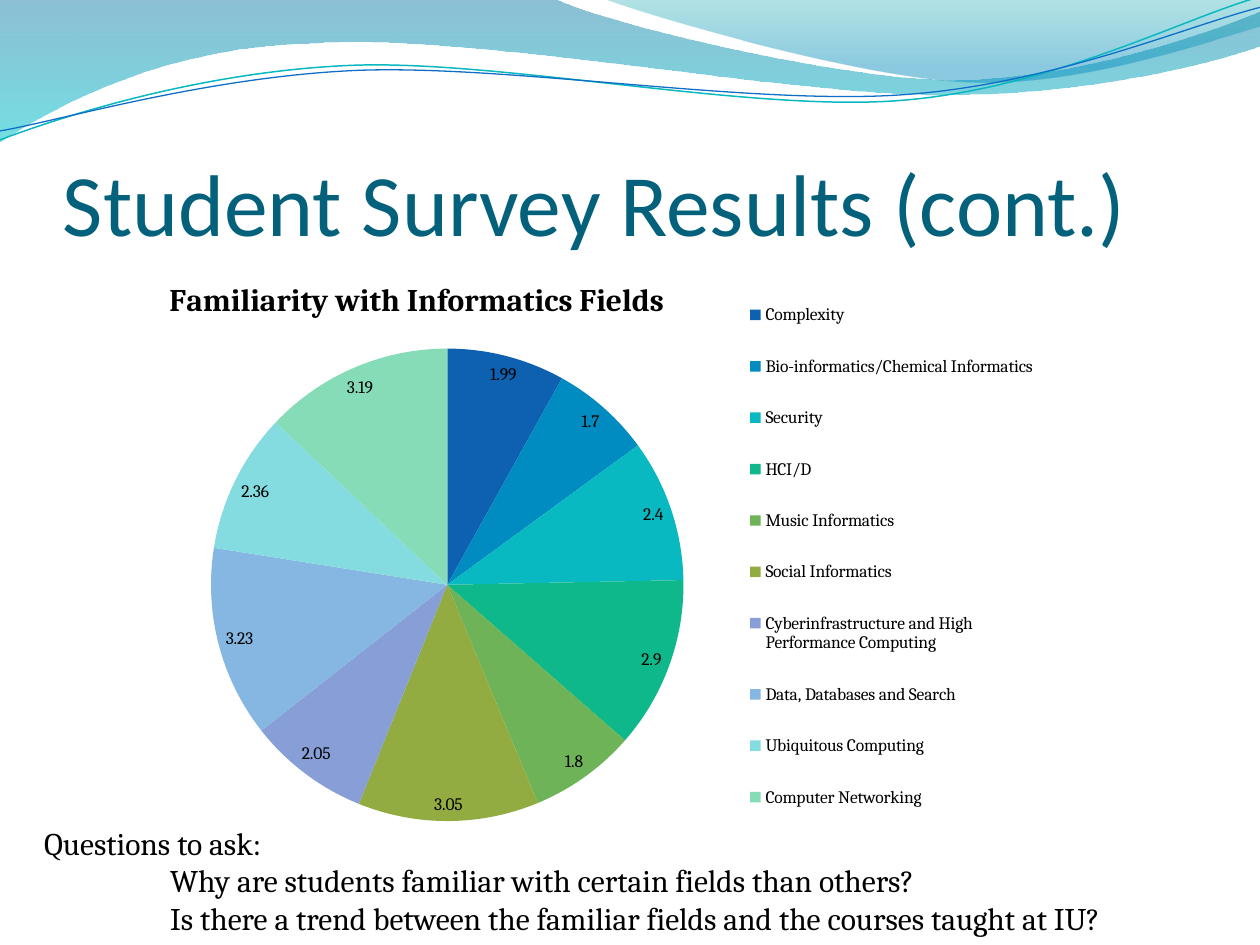
"""Build the student survey slide with a pie chart of familiarity with informatics fields."""
from lxml.etree import SubElement
from pptx import Presentation
from pptx.chart.data import CategoryChartData
from pptx.dml.color import RGBColor
from pptx.enum.chart import XL_CHART_TYPE, XL_LABEL_POSITION, XL_LEGEND_POSITION
from pptx.enum.text import MSO_ANCHOR
from pptx.oxml import parse_xml
from pptx.oxml.ns import nsdecls, qn
from pptx.util import Cm, Pt

BLACK = RGBColor(0, 0, 0)
TITLE_COLOR = RGBColor(0x04, 0x61, 0x7B)
TEAL = RGBColor(0x0A, 0xB8, 0xBF)
BLUE = RGBColor(0x0F, 0x6F, 0xC6)

TITLE = "Student Survey Results (cont.)"
CHART_TITLE = "Familiarity with Informatics Fields"
QUESTIONS = [
    "Questions to ask:",
    "\tWhy are students familiar with certain fields than others?",
    "\tIs there a trend between the familiar fields and the courses taught at IU?",
]
FIELDS = [
    ("Complexity", 1.99, "0D61B0"),
    ("Bio-informatics/Chemical Informatics", 1.7, "008BC1"),
    ("Security", 2.4, "09B9C1"),
    ("HCI/D", 2.9, "0EB88A"),
    ("Music Informatics", 1.8, "6EB357"),
    ("Social Informatics", 3.05, "93AC41"),
    ("Cyberinfrastructure and High Performance Computing", 2.05, "879FD6"),
    ("Data, Databases and Search", 3.23, "85B7E2"),
    ("Ubiquitous Computing", 2.36, "85DCE0"),
    ("Computer Networking", 3.19, "87DCB8"),
]

BANDS = [
    ([(0, 0), [(11.18, -0.03)],
      [(12.09, 0.43), (16.87, 1.6), (19.25, 1.6)],
      [(21.67, 1.6), (24.33, 0.66), (25.4, 0.23)], [(25.43, 0.91)],
      [(24.97, 1.12), (22.1, 1.93), (18.95, 1.91)],
      [(15.8, 1.91), (9.7, 0.71), (6.53, 0.86)],
      [(3.28, 0.91), (1.17, 2.11), (-0.03, 2.87)]],
     [(0, "0074A1", 45), (1, "00C6CF", 55)]),
    ([(12.17, -0.03),
      [(12.93, 0.28), (17.32, 1.57), (19.53, 1.65)],
      [(21.74, 1.75), (24.41, 0.81), (25.4, 0.53)], [(25.4, 0)]],
     [(0, "00A1A9", 30), (0.8, "008BBF", 45)]),
]
WAVES = [
    ([(0, 2.82), [(1.22, 2.36), (4.01, 1.45), (7.04, 1.32)],
      [(10.03, 1.19), (15.06, 2.26), (18.11, 2.03)],
      [(21.16, 1.8), (23.83, 0.38), (25.35, -0.05)]], TEAL, 0.85),
    ([(0, 2.64), [(1.19, 2.44), (4.17, 1.55), (7.19, 1.42)],
      [(10.24, 1.3), (15.16, 2.13), (18.21, 1.91)],
      [(21.23, 1.7), (23.9, 0.53), (25.4, 0.15)]], BLUE, 0.75),
]


def add_outline(slide, start, segments, close):
    """Add a freeform of straight (one point) and cubic (three point) segments."""
    builder = slide.shapes.build_freeform(*map(Cm, start))
    builder.add_line_segments([tuple(map(Cm, seg[-1])) for seg in segments], close=close)
    sp = builder.convert_to_shape()
    sp.shadow.inherit = False
    for node, seg in zip(list(sp._element.iter(qn("a:lnTo"))), segments):
        if len(seg) == 3:
            node.tag = qn("a:cubicBezTo")
            for i, (x, y) in enumerate(seg[:2]):
                pt = SubElement(node, qn("a:pt"), x=str(Cm(x) - sp.left), y=str(Cm(y) - sp.top))
                node.insert(i, pt)
    return sp


def add_band(slide, outline, stops):
    """Add a translucent gradient band."""
    sp = add_outline(slide, outline[0], outline[1:], True)
    sp.line.fill.background()
    sp.fill.gradient()
    sp.fill.gradient_angle = 270
    for stop, (position, color, _) in zip(sp.fill.gradient_stops, stops):
        stop.position = position
        stop.color.rgb = RGBColor.from_string(color)
    colors = sp._element.spPr.iter(qn("a:srgbClr"))
    for node, (_, _, alpha) in zip(colors, stops):
        SubElement(node, qn("a:alpha"), val=str(alpha * 1000))


def add_wave(slide, outline, color, width):
    """Add an open wavy line."""
    sp = add_outline(slide, outline[0], outline[1:], False)
    sp.fill.background()
    sp.line.color.rgb = color
    sp.line.width = Pt(width)


def add_text(slide, box, lines, font, size, color):
    """Add a text box with one paragraph per line."""
    tf = slide.shapes.add_textbox(*map(Cm, box)).text_frame
    tf.word_wrap = True
    tf.text = "\n".join(lines)
    for p in tf.paragraphs:
        p.font.name, p.font.size, p.font.color.rgb = font, Pt(size), color
        p._p.get_or_add_pPr().set("defTabSz", str(Cm(2.54)))
    return tf


def place(element, successors, inner=False, **parts):
    """Give a chart part a manual layout in fractions of the chart."""
    for old in element.findall(qn("c:layout")):
        element.remove(old)
    target = '<c:layoutTarget val="inner"/>' if inner else ""
    modes = "".join(f'<c:{k}Mode val="edge"/>' for k in "xy")
    values = "".join(f'<c:{k} val="{v}"/>' for k, v in parts.items())
    layout = parse_xml(f'<c:layout {nsdecls("c")}><c:manualLayout>{target}{modes}{values}'
                       "</c:manualLayout></c:layout>")
    element.insert_element_before(layout, *successors)


def add_pie(slide):
    """Add the pie chart with its title, legend and value labels."""
    data = CategoryChartData()
    data.categories = [name for name, _, _ in FIELDS]
    data.add_series("Series 1", [value for _, value, _ in FIELDS])
    box = map(Cm, (2.54, 5.28, 19.05, 11.63))
    chart = slide.shapes.add_chart(XL_CHART_TYPE.PIE, *box, data).chart
    chart.font.name, chart.font.size, chart.font.color.rgb = "Cambria", Pt(10), BLACK

    chart.has_title = True
    tf = chart.chart_title.text_frame
    tf.text = CHART_TITLE
    font = tf.paragraphs[0].font
    font.name, font.size, font.bold, font.color.rgb = "Cambria", Pt(18), True, BLACK
    place(chart.chart_title._element, ("c:overlay", "c:spPr", "c:txPr"), x=0.04, y=0.02)

    chart.has_legend = True
    legend = chart.legend
    legend.position = XL_LEGEND_POSITION.RIGHT
    legend.include_in_layout = False
    place(legend._element, ("c:overlay", "c:spPr", "c:txPr"), x=0.66, y=0.02, w=0.3, h=0.98)

    plot = chart.plots[0]
    plot.vary_by_categories = True
    for i, (_, _, color) in enumerate(FIELDS):
        fill = plot.series[0].points[i].format.fill
        fill.solid()
        fill.fore_color.rgb = RGBColor.from_string(color)
    plot.has_data_labels = True
    plot.data_labels.show_value = True
    plot.data_labels.show_percentage = False
    plot.data_labels.position = XL_LABEL_POSITION.BEST_FIT
    area = chart._chartSpace.chart.plotArea
    place(area, ("c:pieChart",), inner=True, x=0.09, y=0.15, w=0.5, h=0.82)


def main():
    """Build and save the slide."""
    prs = Presentation()
    prs.slide_width, prs.slide_height = Cm(25.4), Cm(19.05)
    s = prs.slides.add_slide(prs.slide_layouts[6])
    for outline, stops in BANDS:
        add_band(s, outline, stops)
    for outline, color, width in WAVES:
        add_wave(s, outline, color, width)
    tf = add_text(s, (1.27, 1.96, 23.06, 3.17), [TITLE], "Calibri", 50, TITLE_COLOR)
    tf.margin_left = tf.margin_right = tf.margin_bottom = 0
    tf.vertical_anchor = MSO_ANCHOR.BOTTOM
    add_pie(s)
    add_text(s, (0.64, 16.48, 23.06, 2.57), QUESTIONS, "Cambria", 18, BLACK)
    prs.save("out.pptx")


if __name__ == "__main__":
    main()
